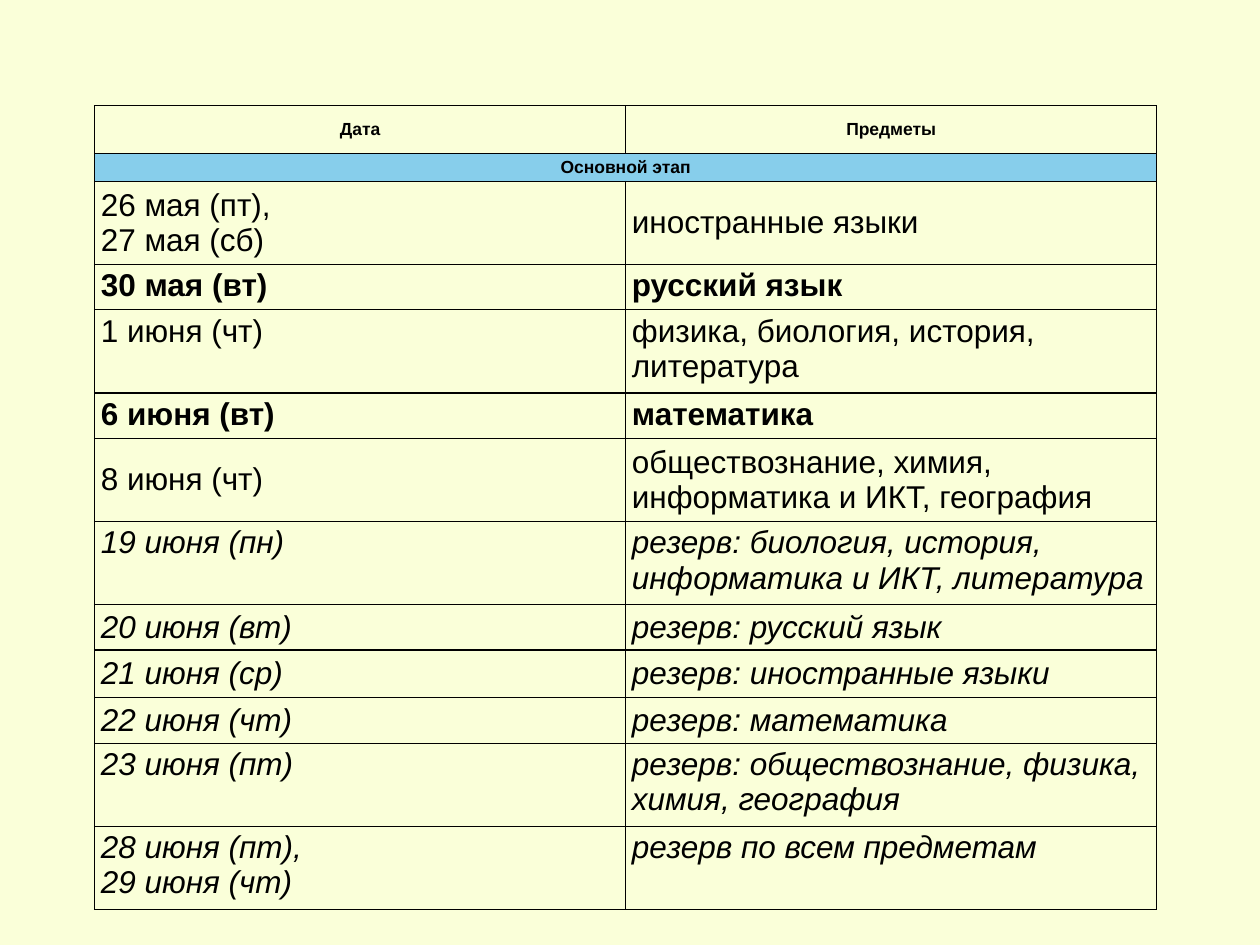
from lxml import etree
from pptx import Presentation
from pptx.dml.color import RGBColor
from pptx.enum.text import MSO_ANCHOR as Anchor, PP_ALIGN as Align
from pptx.oxml.ns import qn
from pptx.util import Inches, Pt

CREAM = RGBColor(0xFA, 0xFF, 0xD9)
SKY = RGBColor(0x87, 0xCE, 0xEB)
BLACK = RGBColor(0, 0, 0)

ROWS = [
    (0.38, "head", "mid", "Дата", "Предметы"),
    (0.22, "band", "mid", "Основной этап", ""),
    (0.66, "plain", "mid", "26 мая (пт),\v27 мая (сб)", "иностранные языки"),
    (0.36, "bold", "top", "30 мая (вт)", "русский язык"),
    (0.66, "plain", "top", "1 июня (чт)", "физика, биология, история, литература"),
    (0.36, "bold", "top", "6 июня (вт)", "математика"),
    (0.66, "plain", "mid", "8 июня (чт)",
     "обществознание, химия, информатика и ИКТ, география"),
    (0.66, "spare", "top", "19 июня (пн)",
     "резерв: биология, история, информатика и ИКТ, литература"),
    (0.36, "spare", "mid", "20 июня (вт)", "резерв: русский язык"),
    (0.38, "spare", "mid", "21 июня (ср)", "резерв: иностранные языки"),
    (0.36, "spare", "mid", "22 июня (чт)", "резерв: математика"),
    (0.66, "spare", "top", "23 июня (пт)",
     "резерв: обществознание, физика, химия, география"),
    (0.66, "spare", "top", "28 июня (пт),\v29 июня (чт)", "резерв по всем предметам"),
]


def add_edges(cell):
    props = cell._tc.get_or_add_tcPr()
    for side in ("lnL", "lnR", "lnT", "lnB"):
        line = etree.SubElement(props, qn(f"a:{side}"), w=str(Pt(0.75)))
        fill = etree.SubElement(line, qn("a:solidFill"))
        etree.SubElement(fill, qn("a:srgbClr"), val=str(BLACK))


def set_cell(cell, text, kind, place):
    add_edges(cell)
    if kind == "band":
        cell.fill.solid()
        cell.fill.fore_color.rgb = SKY
    else:
        cell.fill.background()
    cell.margin_left = cell.margin_right = Inches(0.05)
    cell.margin_top = cell.margin_bottom = Inches(0.03)
    cell.vertical_anchor = Anchor.MIDDLE if place == "mid" else Anchor.TOP
    title = kind in ("head", "band")
    para = cell.text_frame.paragraphs[0]
    para.text = text
    para.alignment = Align.CENTER if title else Align.LEFT
    para.font.size = Pt(10 if title else 18)
    for run in para.runs:
        font = run.font
        font.name = "Arial"
        font.size = Pt(10 if title else 18)
        font.bold = title or kind == "bold"
        font.italic = kind == "spare"
        font.color.rgb = BLACK


def add_dates(slide, left, top, width, height):
    table = slide.shapes.add_table(len(ROWS), 2, left, top, width, height).table
    table.first_row = False
    table.horz_banding = False
    for col in table.columns:
        col.width = width // 2
    for index, (size, kind, place, *texts) in enumerate(ROWS):
        table.rows[index].height = Inches(size)
        for col, text in enumerate(texts):
            set_cell(table.cell(index, col), text, kind, place)
        if kind == "band":
            table.cell(index, 0).merge(table.cell(index, 1))


def main():
    deck = Presentation()
    deck.slide_width = Inches(10)
    deck.slide_height = Inches(7.5)
    slide = deck.slides.add_slide(deck.slide_layouts[6])
    slide.background.fill.solid()
    slide.background.fill.fore_color.rgb = CREAM
    add_dates(slide, Inches(0.75), Inches(0.84), Inches(8.43), Inches(6.4))
    deck.save("out.pptx")


if __name__ == "__main__":
    main()
